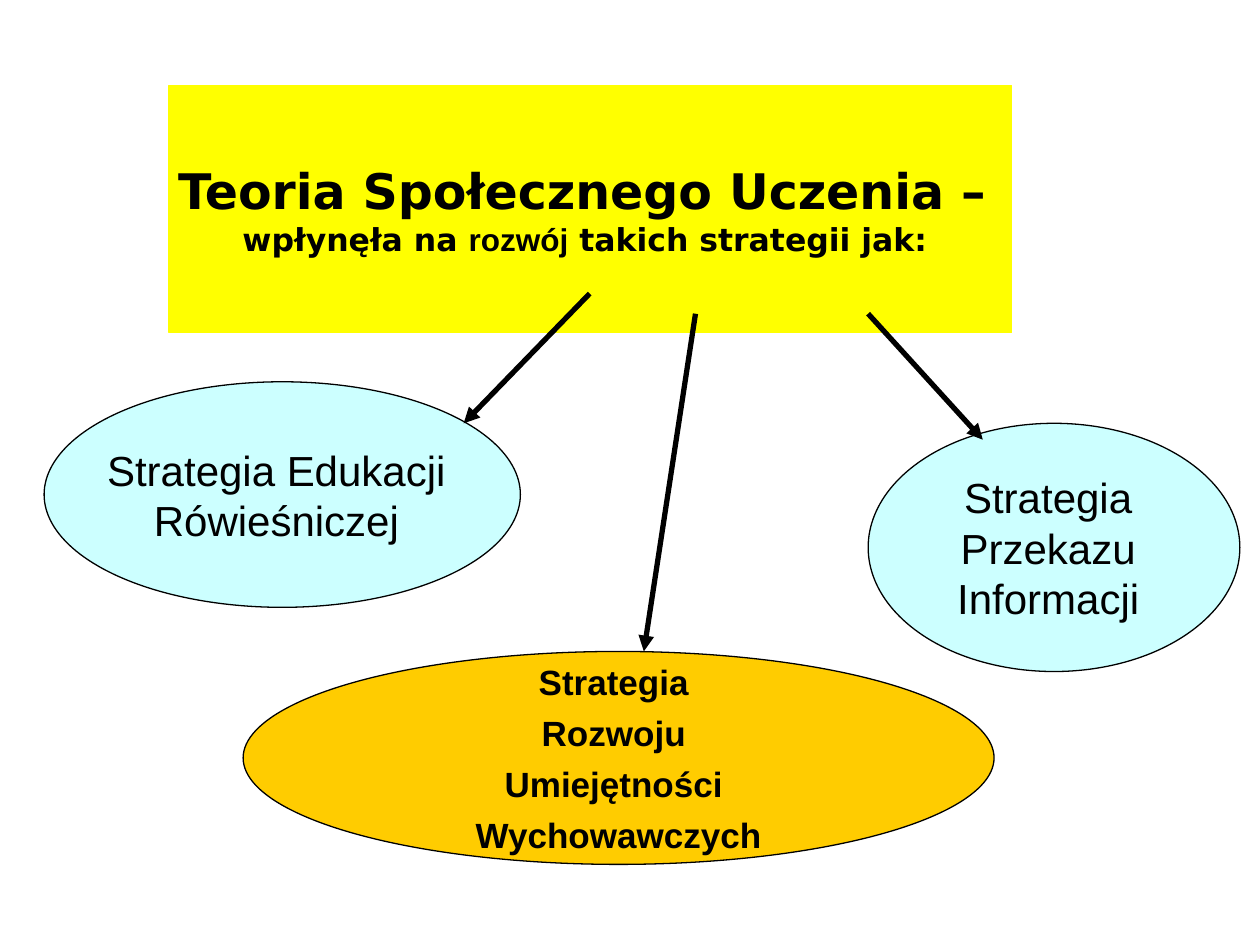
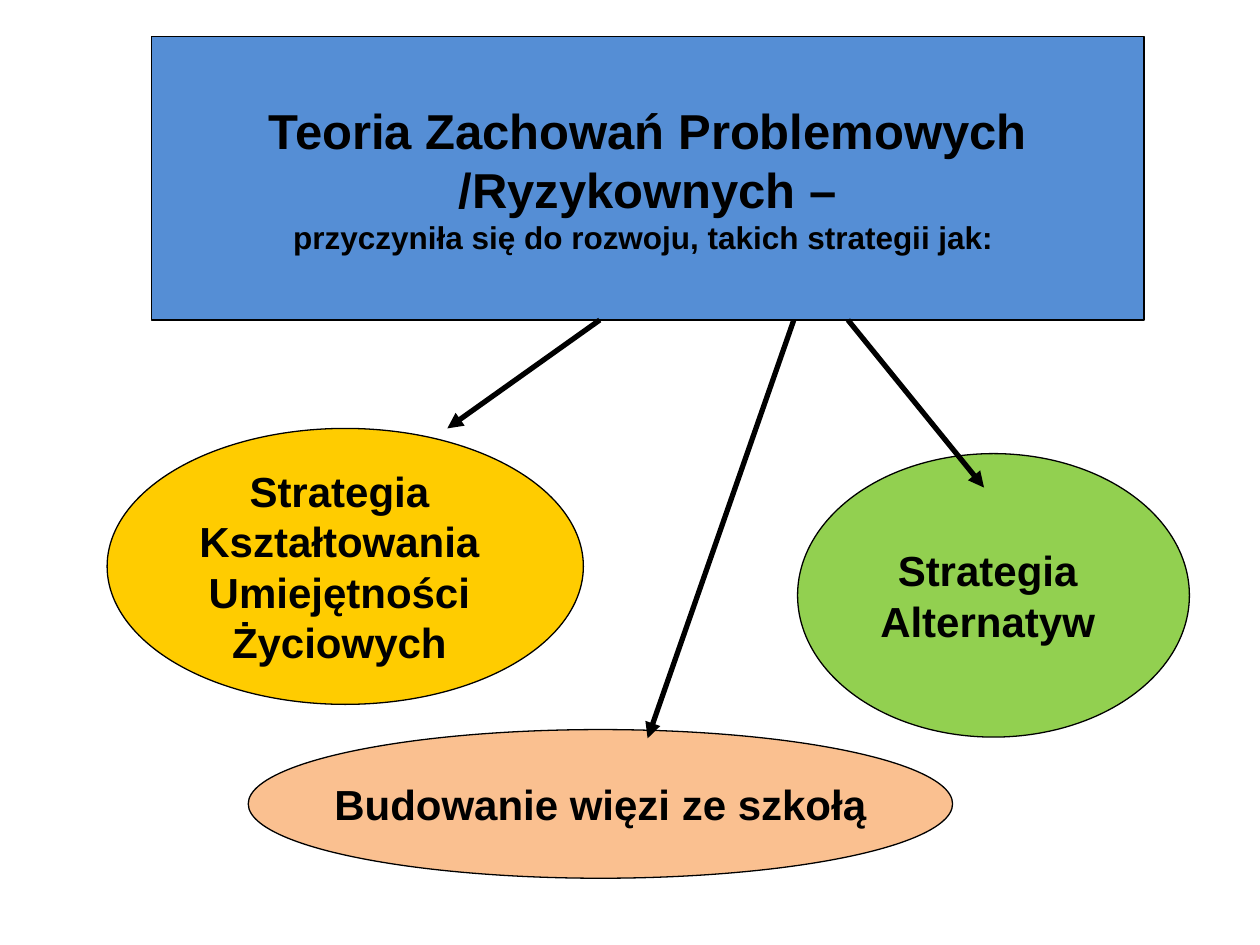
"""Two slides that link a theory to the prevention strategies it shaped."""
from dataclasses import dataclass

from lxml import etree
from pptx import Presentation
from pptx import util as u
from pptx.dml.color import RGBColor
from pptx.enum import shapes, text
from pptx.oxml.ns import qn

PX = 9144


@dataclass(frozen=True)
class Theme:
    ink: str = "000000"
    yellow: str = "FFFF00"
    blue: str = "558ED5"
    aqua: str = "CCFFFF"
    gold: str = "FFCC00"
    green: str = "92D050"
    peach: str = "FAC090"
    sans: str = "Arial"
    wide: str = "DejaVu Sans"
    head: int = 28
    body: int = 24
    list: int = 20
    note: int = 18
    gap: int = 5
    edge: float = 0.75
    stroke: int = 3


class Deck:
    def __init__(self, theme):
        self.theme = theme
        self.prs = Presentation()
        self.prs.slide_width, self.prs.slide_height = 1000 * PX, 750 * PX
        self.slide = None

    def page(self):
        self.slide = self.prs.slides.add_slide(self.prs.slide_layouts[6])

    def shape(self, kind, box, fill, edge, words):
        item = self.slide.shapes.add_shape(kind, *(n * PX for n in box))
        item.shadow.inherit = False
        item.fill.solid()
        item.fill.fore_color.rgb = RGBColor.from_string(fill)
        item.line.color.rgb = RGBColor.from_string(edge)
        item.line.width = u.Pt(self.theme.edge)
        frame = item.text_frame
        frame.text = words
        frame.word_wrap = False
        frame.vertical_anchor = text.MSO_ANCHOR.MIDDLE
        for para in frame.paragraphs:
            para.alignment = text.PP_ALIGN.CENTER
        return frame.paragraphs

    def style(self, para, size, bold=True, font=None):
        for run in para.runs:
            run.font.size = u.Pt(size)
            run.font.bold = bold
            run.font.name = font or self.theme.sans
            run.font.color.rgb = RGBColor.from_string(self.theme.ink)

    def title(self, box, fill, edge, words, font=None):
        paras = self.shape(shapes.MSO_SHAPE.RECTANGLE, box, fill, edge, words)
        for para in paras[:-1]:
            self.style(para, self.theme.head, font=font)
        self.style(paras[-1], self.theme.note, font=font)
        return paras

    def oval(self, box, fill, words, size=None, bold=True, gap=0):
        kind = shapes.MSO_SHAPE.OVAL
        for para in self.shape(kind, box, fill, self.theme.ink, words):
            para.space_before = u.Pt(gap)
            self.style(para, size or self.theme.body, bold)

    def arrow(self, *ends):
        line = self.slide.shapes.add_connector(
            shapes.MSO_CONNECTOR.STRAIGHT, *(n * PX for n in ends))
        line.line.color.rgb = RGBColor.from_string(self.theme.ink)
        line.line.width = u.Pt(self.theme.stroke)
        props = line.line._get_or_add_ln()
        etree.SubElement(props, qn("a:tailEnd"), type="triangle")
        etree.SubElement(line._element.spPr, qn("a:effectLst"))


def social(deck):
    t = deck.theme
    deck.page()
    paras = deck.title((134, 68, 669, 196), t.yellow, t.yellow,
                       "Teoria Społecznego Uczenia – \nwpłynęła na ", t.wide)
    for words in ("rozwój", " takich strategii jak: "):
        paras[-1].add_run().text = words
    deck.style(paras[-1], t.note, font=t.wide)
    paras[-1].runs[1].font.name = t.sans
    deck.oval((35, 303, 378, 179), t.aqua,
              "Strategia Edukacji \nRówieśniczej ", bold=False)
    deck.oval((689, 336, 295, 197), t.aqua,
              "Strategia \nPrzekazu \nInformacji ", bold=False)
    deck.oval((193, 517, 596, 169), t.gold,
              "Strategia \nRozwoju \nUmiejętności \nWychowawczych",
              t.list, gap=t.gap)
    deck.arrow(468, 233, 368, 336)
    deck.arrow(689, 249, 780, 349)
    deck.arrow(552, 249, 511, 517)


def problem(deck):
    t = deck.theme
    deck.page()
    deck.title((120, 29, 788, 225), t.blue, t.ink,
               "Teoria Zachowań Problemowych\n/Ryzykownych –\n"
               "przyczyniła się do rozwoju, takich strategii jak: ")
    deck.oval((85, 340, 378, 219), t.gold,
              "Strategia \nKształtowania \nUmiejętności \nŻyciowych ")
    deck.oval((633, 360, 311, 225), t.green, "Strategia \nAlternatyw ")
    deck.oval((197, 579, 559, 118), t.peach, "Budowanie więzi ze szkołą")
    deck.arrow(476, 254, 355, 340)
    deck.arrow(673, 254, 781, 387)
    deck.arrow(630, 254, 514, 586)


def main():
    deck = Deck(Theme())
    social(deck)
    problem(deck)
    deck.prs.save("out.pptx")


if __name__ == "__main__":
    main()
